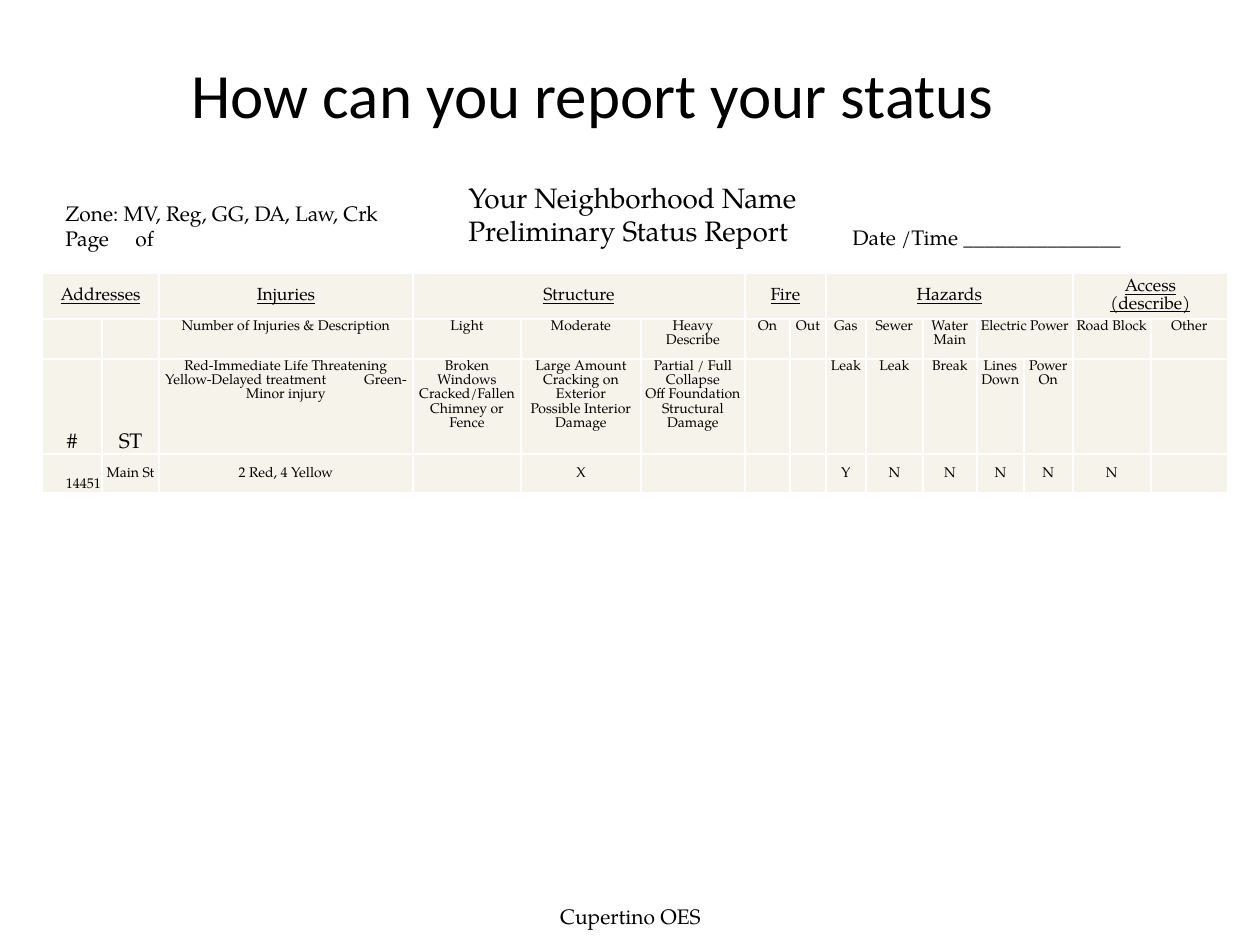
import dataclasses

import lxml.etree
import pptx
import pptx.dml.color
import pptx.enum.text
import pptx.oxml.ns
import pptx.util

ALIGN = pptx.enum.text.PP_ALIGN
ANCHOR = pptx.enum.text.MSO_ANCHOR
EMU_PER_PX = 914400 / 126


@dataclasses.dataclass(frozen=True)
class Theme:
    ink: str = "000000"
    cell: str = "F6F3EA"
    border: str = "FFFFFF"
    title_font: str = "Calibri"
    body_font: str = "TeX Gyre Pagella"
    title: int = 36
    report: int = 16
    label: int = 12
    heading: int = 10
    entry: int = 8


THEME = Theme()

COLUMNS = [60, 57, 254, 108, 120, 104, 45, 36, 40, 57, 54, 47, 49, 78, 77]
ROWS = [46, 40, 95, 39]
INJURY_TAB = 199
PAGE_TAB = 70

# None continues the cell on its left.
STATUS = [
    ["Addresses", None, "Injuries", "Structure", None, None, "Fire", None,
     "Hazards", None, None, None, None, "Access\n(describe)", None],
    ["", "", "Number of Injuries & Description", "Light", "Moderate",
     "Heavy\nDescribe", "On", "Out", "Gas", "Sewer", "Water Main",
     "Electric Power", None, "Road Block", "Other"],
    ["#", "ST",
     "Red-Immediate Life Threatening\n"
     "Yellow-Delayed treatment\tGreen-Minor injury",
     "Broken Windows\nCracked/Fallen Chimney or Fence",
     "Large Amount Cracking on Exterior\nPossible Interior Damage",
     "Partial / Full Collapse\nOff Foundation\nStructural Damage",
     "", "", "Leak", "Leak", "Break", "Lines Down", "Power On", "", ""],
    ["14451", "Main St", "2 Red, 4 Yellow", "", "X", "", "", "",
     "Y", "N", "N", "N", "N", "N", ""],
]
ROW_ANCHORS = [ANCHOR.MIDDLE, ANCHOR.TOP, ANCHOR.TOP, ANCHOR.MIDDLE]


def px(length):
    return pptx.util.Emu(round(length * EMU_PER_PX))


def add_element(parent, tag, **attributes):
    return lxml.etree.SubElement(parent, pptx.oxml.ns.qn(tag), attributes)


def fill_paragraph(paragraph, text, size, font, align=ALIGN.LEFT, tab=None):
    """Write text, with newlines as line breaks and an optional tab stop."""
    if tab:
        stops = add_element(paragraph._p.get_or_add_pPr(), "a:tabLst")
        add_element(stops, "a:tab", pos=str(px(tab)), algn="l")
    paragraph.alignment = align
    paragraph.font.size = pptx.util.Pt(size)
    paragraph.font.name = font
    paragraph.font.color.rgb = pptx.dml.color.RGBColor.from_string(THEME.ink)
    for index, line in enumerate(text.split("\n")):
        if index:
            paragraph.add_line_break()
        if line:
            paragraph.add_run().text = line


def add_label(slide, box, lines, size, font=THEME.body_font,
              align=ALIGN.LEFT, anchor=ANCHOR.TOP):
    frame = slide.shapes.add_textbox(*map(px, box)).text_frame
    frame.word_wrap = True
    frame.vertical_anchor = anchor
    for index, line in enumerate(lines):
        paragraph = frame.add_paragraph() if index else frame.paragraphs[0]
        fill_paragraph(paragraph, line, size, font, align,
                       PAGE_TAB if "\t" in line else None)


def add_borders(cell):
    properties = cell._tc.get_or_add_tcPr()
    for side in ("a:lnL", "a:lnR", "a:lnT", "a:lnB"):
        line = add_element(properties, side, w=str(pptx.util.Pt(1)))
        add_element(add_element(line, "a:solidFill"), "a:srgbClr",
                    val=THEME.border)


def format_cell(cell, text, size, align, anchor):
    cell.margin_left = cell.margin_right = cell.margin_top = px(1)
    cell.margin_bottom = 0
    cell.vertical_anchor = anchor
    add_borders(cell)
    cell.fill.solid()
    cell.fill.fore_color.rgb = pptx.dml.color.RGBColor.from_string(THEME.cell)
    paragraph = cell.text_frame.paragraphs[0]
    fill_paragraph(paragraph, text, size, THEME.body_font, align,
                   INJURY_TAB if "\t" in text else None)
    paragraph.font.underline = size == THEME.heading


def add_status_table(slide):
    table = slide.shapes.add_table(
        len(ROWS), len(COLUMNS), px(42), px(273),
        px(sum(COLUMNS)), px(sum(ROWS))).table
    table.first_row = table.horz_banding = False
    for column, width in zip(table.columns, COLUMNS):
        column.width = px(width)
    for row, height in zip(table.rows, ROWS):
        row.height = px(height)

    for r, texts in enumerate(STATUS):
        for c, text in enumerate(texts):
            cell = table.cell(r, c)
            size = THEME.heading if r == 0 else THEME.entry
            align, anchor = ALIGN.CENTER, ROW_ANCHORS[r]
            if text in ("#", "ST"):
                size, anchor = THEME.label, ANCHOR.BOTTOM
            elif text and text.isdigit():
                align, anchor = ALIGN.RIGHT, ANCHOR.BOTTOM
            format_cell(cell, text or "", size, align, anchor)
            last = c
            while last + 1 < len(texts) and texts[last + 1] is None:
                last += 1
            if text is not None and last > c:
                cell.merge(table.cell(r, last))


def main():
    presentation = pptx.Presentation()
    presentation.slide_width = px(1260)
    presentation.slide_height = px(945)
    slide = presentation.slides.add_slide(presentation.slide_layouts[6])

    add_label(slide, (431, 885, 399, 50), ["Cupertino OES"], THEME.label,
              align=ALIGN.CENTER, anchor=ANCHOR.BOTTOM)
    add_status_table(slide)
    add_label(slide, (456, 174, 357, 81),
              ["Your Neighborhood Name", "Preliminary Status Report"],
              THEME.report)
    add_label(slide, (53, 194, 410, 63),
              ["Zone: MV, Reg, GG, DA, Law, Crk", "Page\tof"], THEME.label)
    add_label(slide, (840, 218, 368, 38), ["Date /Time _______________"],
              THEME.label)
    add_label(slide, (179, 49, 945, 89), ["How can you report your status"],
              THEME.title, THEME.title_font)

    presentation.save("out.pptx")


if __name__ == "__main__":
    main()
